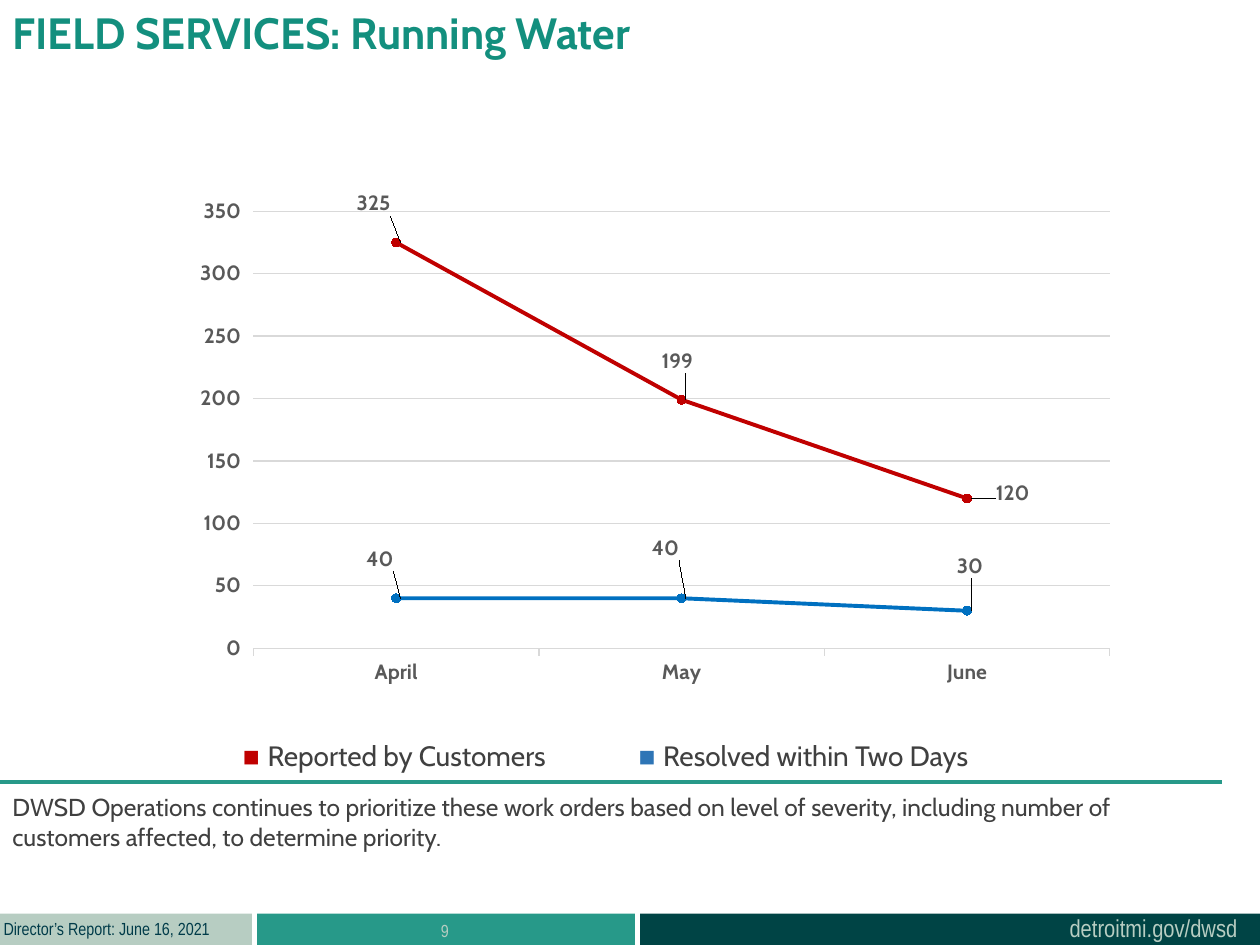
from lxml.etree import SubElement
from pptx import Presentation
from pptx.chart.data import CategoryChartData
from pptx.dml.color import RGBColor
from pptx.enum.chart import XL_CHART_TYPE, XL_LABEL_POSITION, XL_MARKER_STYLE, XL_TICK_MARK
from pptx.enum.shapes import MSO_CONNECTOR, MSO_SHAPE
from pptx.enum.text import PP_ALIGN
from pptx.oxml import parse_xml
from pptx.oxml.ns import nsdecls, qn
from pptx.util import Inches, Pt

TEAL, SAGE, GREY, RULE = "279989", "B7CDC2", "404040", "D9D9D9"
AXIS = {"size": Pt(12), "bold": True, "name": "Cabin"}


def tint(code):
    """Turn a hex string into a colour."""
    return RGBColor.from_string(code)


def put(item, vals):
    """Set each attribute of an item from a dict."""
    for key, val in vals.items():
        setattr(item, key, val)


def style(font, code, vals):
    """Give a font its colour and format values."""
    put(font, vals)
    font.color.rgb = tint(code)


def stroke(line, code, width):
    """Give a line its colour and width in points."""
    line.color.rgb = tint(code)
    line.width = Pt(width)


def write(slide, box, runs, size, wrap=True, align=None, bold=None, tab=None):
    """Place a text box holding one paragraph of (text, font, colour) runs."""
    frame = slide.shapes.add_textbox(*map(Inches, box)).text_frame
    frame.word_wrap = wrap
    para = frame.paragraphs[0]
    if tab:
        tabs = SubElement(para._p.get_or_add_pPr(), qn("a:tabLst"))
        SubElement(tabs, qn("a:tab"), pos=str(Inches(tab)), algn="l")
    para.alignment = align
    for text, name, code in runs:
        run = para.add_run()
        run.text = text
        style(run.font, code, {"size": Pt(size), "name": name, "bold": bold})


def layout(vals, inner=False):
    """Make a manual chart layout from x, y and perhaps w, h fractions."""
    parts = '<c:layoutTarget val="inner"/>' if inner else ""
    if inner:
        parts += '<c:xMode val="edge"/><c:yMode val="edge"/>'
    parts += "".join(f'<c:{key} val="{val}"/>' for key, val in zip("xywh", vals))
    return parse_xml(f'<c:layout {nsdecls("c")}><c:manualLayout>{parts}</c:manualLayout></c:layout>')


def axes(chart):
    """Format both axes and the grid."""
    cat, val = chart.category_axis, chart.value_axis
    for axis in (cat, val):
        axis.major_tick_mark = XL_TICK_MARK.OUTSIDE
        style(axis.tick_labels.font, "595959", AXIS)
    stroke(cat.format.line, RULE, 0.75)
    put(val, {"minimum_scale": 0, "maximum_scale": 350, "major_unit": 50})
    put(val.tick_labels, {"number_format": "#,##0", "number_format_is_linked": False})
    val.format.line.fill.background()
    stroke(val.major_gridlines.format.line, RULE, 0.75)


def series(ser, code, shifts):
    """Format one series and shift its point labels."""
    ser.smooth = False
    stroke(ser.format.line, code, 2.25)
    put(ser.marker, {"style": XL_MARKER_STYLE.CIRCLE, "size": 5})
    look = ser.marker.format
    look.fill.solid()
    look.fill.fore_color.rgb = tint(code)
    stroke(look.line, code, 0.75)
    ser.data_labels.show_value = True
    style(ser.data_labels.font, "595959", AXIS)
    for num, shift in enumerate(shifts):
        label = ser.points[num].data_label
        style(label.font, "595959", AXIS)
        label.position = XL_LABEL_POSITION.RIGHT
        node = ser._element.xpath(f"c:dLbls/c:dLbl[c:idx/@val='{num}']")[0]
        node[0].addnext(layout(shift))


def graph(slide, box):
    """Draw the line chart in a box."""
    data = CategoryChartData()
    data.categories = ["April", "May", "June"]
    data.add_series("Series 1", [325, 199, 120])
    data.add_series("Series 2", [40, 40, 30])
    chart = slide.shapes.add_chart(XL_CHART_TYPE.LINE_MARKERS, *map(Inches, box), data).chart
    put(chart, {"has_title": False, "has_legend": False})
    style(chart.font, "000000", {"size": Pt(10), "name": "Calibri"})
    chart.plots[0].vary_by_categories = False
    area = chart._chartSpace.chart.plotArea
    for old in area.findall(qn("c:layout")):
        area.remove(old)
    area.insert(0, layout([0.115, 0.021, 0.877, 0.791], True))
    axes(chart)
    looks = [
        ("C00000", [(-0.05, -0.07), (-0.03, -0.07), (0.02, -0.01)]),
        ("0070C0", [(-0.04, -0.07), (-0.04, -0.09), (-0.02, -0.08)]),
    ]
    for ser, look in zip(chart.plots[0].series, looks):
        series(ser, *look)


def legend(slide, box):
    """Write the legend line in a box."""
    runs = [
        ("■ ", "Arial", "C00000"), ("Reported by Customers\t", "Cabin", GREY),
        ("■ ", "Arial", "2E75B6"), ("Resolved within Two Days", "Cabin", GREY),
    ]
    write(slide, box, runs, 16, tab=3.14)


def note(slide, box):
    """Draw the rule and the remark under it in a box."""
    left, top, width, height = box
    ends = map(Inches, (left, top, left + width, top))
    rule = slide.shapes.add_connector(MSO_CONNECTOR.STRAIGHT, *ends)
    stroke(rule.line, TEAL, 2.25)
    SubElement(rule._element.spPr, qn("a:effectLst"))
    text = ("DWSD Operations continues to prioritize these work orders based on level of severity, "
            "including number of customers affected, to determine priority.")
    write(slide, (left, top + 0.03, width, height - 0.03), [(text, "Cabin", GREY)], 14)


def footer(slide, box):
    """Draw the three footer bars and their text in a box."""
    left, top, width, height = box
    bars = [(0, 2, SAGE), (2.04, 3, TEAL), (5.08, width - 5.08, "004445")]
    for start, span, code in bars:
        place = map(Inches, (left + start, top, span, height))
        bar = slide.shapes.add_shape(MSO_SHAPE.RECTANGLE, *place)
        bar.shadow.inherit = False
        bar.fill.solid()
        bar.fill.fore_color.rgb = tint(code)
        bar.line.fill.background()
    face = "Arial Narrow"
    write(slide, (left + 8.39, top - 0.05, 1.55, 0.34),
          [("detroitmi.gov/dwsd", face, SAGE)], 14, wrap=False)
    write(slide, (left - 0.07, top - 0.01, 1.84, 0.27),
          [("Director’s Report: June 16, 2021", face, "003B49")], 10, wrap=False)
    write(slide, (left + 2.03, top, 3, 0.4), [("9", face, SAGE)], 10, align=PP_ALIGN.CENTER)


def main():
    """Build and save the slide."""
    deck = Presentation()
    put(deck, {"slide_width": Inches(10), "slide_height": Inches(7.5)})
    slide = deck.slides.add_slide(deck.slide_layouts[6])
    footer(slide, (0, 7.25, 10, 0.25))
    title = [("FIELD SERVICES: Running Water", "Cabin", "138F7E")]
    write(slide, (0, 0, 7.59, 0.77), title, 25, bold=True)
    graph(slide, (1.12, 1.52, 7.75, 4.45))
    note(slide, (0, 6.21, 9.7, 0.6))
    legend(slide, (1.83, 5.81, 6.04, 0.37))
    deck.save("out.pptx")


if __name__ == "__main__":
    main()
